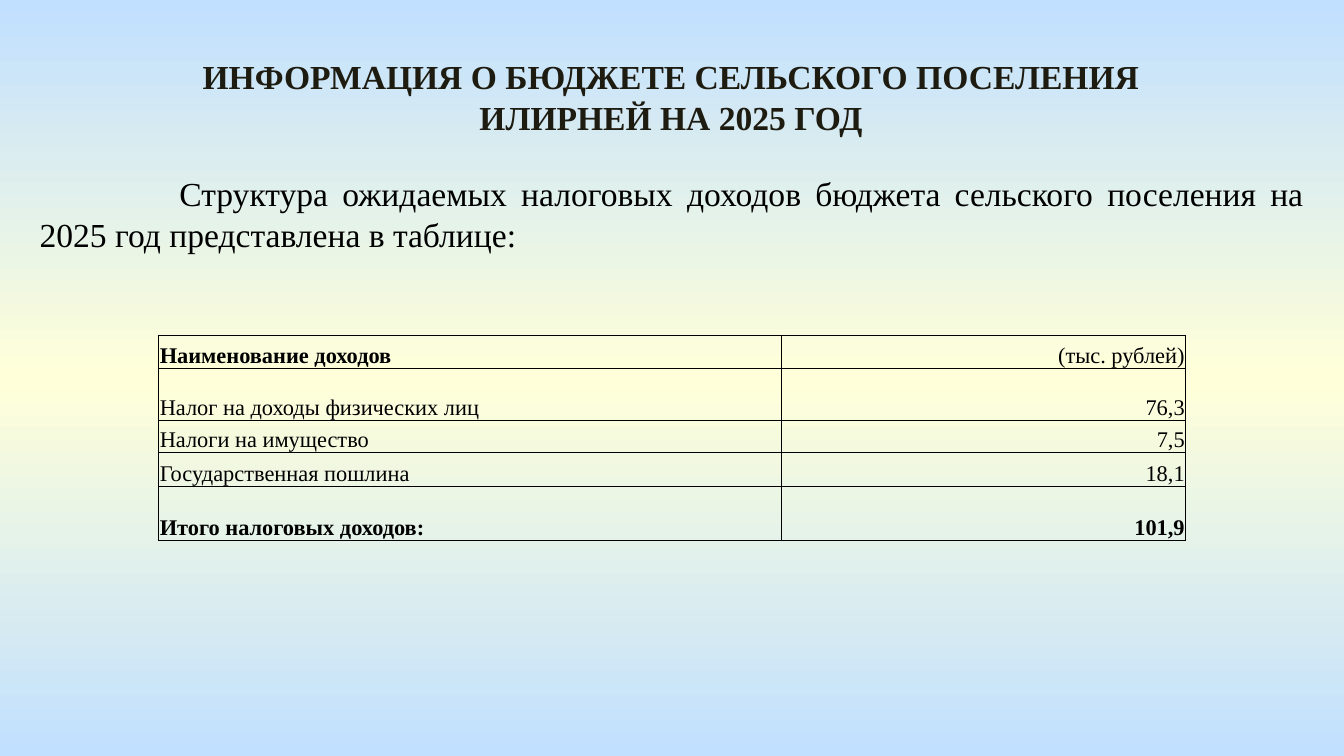
from copy import deepcopy

from lxml.etree import SubElement
from pptx import Presentation
from pptx.dml.color import RGBColor
from pptx.enum.text import MSO_ANCHOR as Anchor, PP_ALIGN as Align
from pptx.oxml.ns import qn
from pptx.util import Cm, Pt

FONT = "Times New Roman"
COLORS = {
    "sky": "C1E0FF",
    "cream": "FFFFD9",
    "heading": "1E1C11",
    "ink": "000000",
}

TITLE = "ИНФОРМАЦИЯ О БЮДЖЕТЕ СЕЛЬСКОГО ПОСЕЛЕНИЯ ИЛИРНЕЙ НА 2025 ГОД"
INTRO = ("Структура ожидаемых налоговых доходов бюджета сельского поселения "
         "на 2025 год представлена в таблице:")

# Name, amount, row height in cm
REVENUES = [
    ("Наименование доходов", "(тыс. рублей)", 0.62),
    ("Налог на доходы физических лиц", "76,3", 0.99),
    ("Налоги на имущество", "7,5", 0.61),
    ("Государственная пошлина", "18,1", 0.64),
    ("Итого налоговых доходов:", "101,9", 1.02),
]
COLUMN_WIDTHS = (11.76, 7.65)


def paint_background(slide):
    """Vertical gradient: sky, cream in the middle, sky again."""
    fill = slide.background.fill
    fill.gradient()
    fill.gradient_angle = 270
    stops = fill.gradient_stops
    first = stops[0]._gs
    first.addnext(deepcopy(first))
    for stop, name, position in zip(fill.gradient_stops,
                                    ("sky", "cream", "sky"), (0, 0.5, 1)):
        stop.color.rgb = RGBColor.from_string(COLORS[name])
        stop.color.brightness = 0
        stop.position = position


def style_paragraph(paragraph, text, size, align, color="ink", bold=False):
    paragraph.text = text
    paragraph.alignment = align
    font = paragraph.font
    font.name = FONT
    font.size = Pt(size)
    font.bold = bold
    font.color.rgb = RGBColor.from_string(COLORS[color])


def add_text(slide, left, top, width, height, text, align, **style):
    box = slide.shapes.add_textbox(Cm(left), Cm(top), Cm(width), Cm(height))
    box.text_frame.word_wrap = True
    paragraph = box.text_frame.paragraphs[0]
    style_paragraph(paragraph, text, 18, align, **style)
    return paragraph


def add_borders(cell):
    properties = cell._tc.get_or_add_tcPr()
    for side in ("lnL", "lnR", "lnT", "lnB"):
        line = SubElement(properties, qn(f"a:{side}"), w=str(Pt(0.5)))
        solid = SubElement(line, qn("a:solidFill"))
        SubElement(solid, qn("a:srgbClr"), val=COLORS["ink"])


def fill_cell(cell, text, align, bold):
    cell.margin_left = cell.margin_top = cell.margin_right = Cm(0.02)
    cell.margin_bottom = 0
    cell.vertical_anchor = Anchor.BOTTOM
    add_borders(cell)
    cell.fill.background()
    style_paragraph(cell.text_frame.paragraphs[0], text, 12, align, bold=bold)


def add_revenue_table(slide, left, top):
    height = sum(row[2] for row in REVENUES)
    table = slide.shapes.add_table(
        len(REVENUES), len(COLUMN_WIDTHS), Cm(left), Cm(top),
        Cm(sum(COLUMN_WIDTHS)), Cm(height)).table
    table.first_row = table.horz_banding = False
    for column, width in zip(table.columns, COLUMN_WIDTHS):
        column.width = Cm(width)

    last = len(REVENUES) - 1
    for index, (name, amount, row_height) in enumerate(REVENUES):
        table.rows[index].height = Cm(row_height)
        fill_cell(table.cell(index, 0), name, Align.JUSTIFY, index in (0, last))
        fill_cell(table.cell(index, 1), amount, Align.RIGHT, index == last)


def main():
    presentation = Presentation()
    presentation.slide_width = Cm(25.4)
    presentation.slide_height = Cm(14.29)
    slide = presentation.slides.add_slide(presentation.slide_layouts[6])
    paint_background(slide)

    # Heading
    add_text(slide, 2.87, 0.94, 19.63, 1.8, TITLE, Align.CENTER,
             color="heading", bold=True)

    # Introduction with an indented first line
    intro = add_text(slide, 0.5, 3.15, 24.4, 1.8, INTRO, Align.JUSTIFY)
    intro._p.get_or_add_pPr().set("indent", str(Cm(2.64)))

    # Tax revenues
    add_revenue_table(slide, 3, 6.34)

    presentation.save("out.pptx")


if __name__ == "__main__":
    main()
